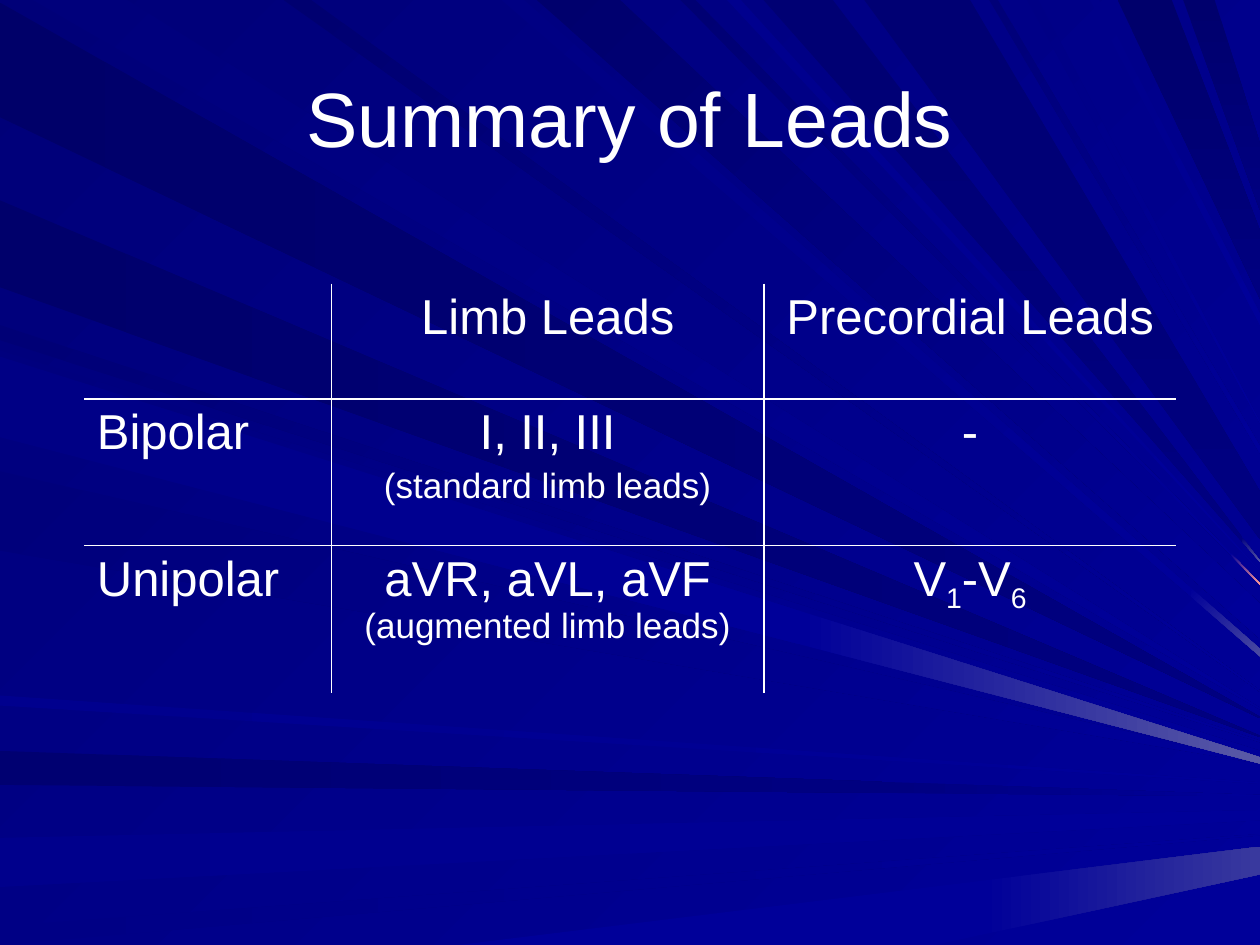
from lxml.etree import SubElement
from pptx import Presentation
from pptx.dml.color import RGBColor as RGB
from pptx.enum.text import MSO_ANCHOR as Anchor, PP_ALIGN as Align
from pptx.oxml.ns import qn
from pptx.util import Cm, Pt

# ---- Content ----
TITLE = "Summary of Leads"
# Each cell is a list of paragraphs, each paragraph a list of (text, style)
ROWS = [
    [[], [[("Limb Leads", "main")]], [[("Precordial Leads", "main")]]],
    [[[("Bipolar", "main")]],
     [[("I, II, III", "main")], [("(standard limb leads)", "note")]],
     [[("-", "main")]]],
    [[[("Unipolar", "main")]],
     [[("aVR, aVL, aVF ", "main"), ("(augmented limb leads)", "note")]],
     [[("V", "main"), ("1", "sub"), ("-V", "main"), ("6", "sub")]]],
]

# ---- Theme ----
THEME = {
    "font": "Arial", "ink": "FFFFFF", "background": ("000078", "000099"),
    "title": 44, "main": 28, "sub": 28, "note": 20,
    "rule": Pt(1), "para_gap": Pt(4),
    "plain_table": "{2D5ABB26-0587-4C30-8999-92F81FD0307C}",
}
# Ray styles: slide edge it starts from, light blue end, gradient angle
STYLES = {
    "left dim": ("left", "80", 0), "left flat": ("left", "99", 0),
    "left slant": ("left", "99", 45), "top dim": ("top", "80", 90),
    "top slant": ("top", "99", 45), "bottom": ("bottom", "99", 0),
}
# Rays, back to front, in inches: style, dark blue, start and end on that edge,
# height on the right edge; then thickness there, glow start and glow colour
RAYS = [
    ("left dim", "69", 0.02, 0.93, 5.69),
    ("top slant", "7B", 0.26, 1.01, 5.62),
    ("left dim", "71", 5.96, 6.23, 6.31, 0.01, 7, "000099"),
    ("left flat", "8C", 6.65, 7.04, 6.43, 0.08),
    ("left flat", "85", 7.35, 7.5, 6.62),
    ("bottom", "99", 3.64, 7.42, 6.72, 0.22, 7.8, "39399E"),
    ("left slant", "76", 2.58, 2.7, 5.88),
    ("left dim", "6B", 1.59, 2.28, 5.84),
    ("top slant", "83", 3.98, 4.16, 5.15, 0.06, 9.45, "4A4AA1"),
    ("top slant", "6D", 4.26, 4.92, 4.79, 0.28),
    ("top slant", "73", 5.4, 5.52, 4.63, 0.01, 9.77, "FF9999"),
    ("top dim", "73", 6.06, 6.61, 4.45, 0.01, 9.86, "5A5AA6"),
    ("top dim", "6B", 8.87, 9.3, 1.83, 0.54),
    ("top dim", "6D", 9.39, 9.64, 1.14, 0.53),
    ("left slant", "7E", 2.78, 3.42, 5.96, 0.06),
    ("left slant", "7B", 3.74, 4.37, 6.05),
    ("left flat", "8E", 5.52, 5.6, 6.21),
    ("top slant", "70", 2.25, 2.47, 5.48),
    ("top slant", "8E", 5.77, 5.88, 4.53),
    ("top dim", "73", 6.86, 7.7, 3.9, 0.38),
    ("top slant", "78", 7.85, 7.92, 3.54, 0.06),
    ("top slant", "85", 8.15, 8.24, 3.35),
    ("top slant", "8A", 8.65, 8.72, 2.49, 0.09),
    ("left flat", "85", 2.83, 3.47, 6.01, 0.05, 6.35, "5A5AA6"),
]
WIDTH, HEIGHT = 10, 7.5


def inch_cm(x):
    return Cm(x * 2.54)


def set_fill(fill, colours, angle):
    dark, light = colours
    if dark == light:
        fill.solid()
        fill.fore_color.rgb = RGB.from_string(dark)
        return
    fill.gradient()
    fill.gradient_angle = -angle % 360
    for stop, colour in zip(fill.gradient_stops, colours):
        stop.color.rgb = RGB.from_string(colour)


def add_polygon(corners, colours, angle):
    start, *rest = [(inch_cm(x), inch_cm(y)) for x, y in corners]
    builder = s.shapes.build_freeform(*start)
    builder.add_line_segments(rest, close=True)
    sp = builder.convert_to_shape()
    sp.shadow.inherit = False
    sp.line.fill.background()
    set_fill(sp.fill, colours, angle)


def point_at(x, start, end):
    share = (x - start[0]) / (end[0] - start[0])
    return x, start[1] + share * (end[1] - start[1])


def add_ray(style, dark, a, b, tip, thickness=0.01, glow_x=None, glow=None):
    edge, light, angle = STYLES[style]
    upper, lower = {
        "left": ((0, a), (0, b)),
        "top": ((b, 0), (a, 0)),
        "bottom": ((a, HEIGHT), (b, HEIGHT)),
    }[edge]
    ends = (WIDTH, tip), (WIDTH, tip + thickness)
    base = "0000" + light
    cut = ends
    if glow:
        cut = point_at(glow_x, upper, ends[0]), point_at(glow_x, lower, ends[1])
    add_polygon([upper, cut[0], cut[1], lower], ("0000" + dark, base), angle)
    if glow:
        add_polygon([cut[0], ends[0], ends[1], cut[1]], (base, glow), angle)


def add_run(p, text, style):
    r = p.add_run()
    r.text = text
    formats = {"name": THEME["font"], "size": Pt(THEME[style])}
    for key, value in formats.items():
        setattr(r.font, key, value)
    r.font.color.rgb = RGB.from_string(THEME["ink"])
    if style == "sub":
        r.font._element.set("baseline", "-25000")


def add_border(cell, side, visible):
    ln = SubElement(cell._tc.get_or_add_tcPr(), qn(f"a:ln{side}"), w=str(int(THEME["rule"])))
    if visible:
        solid = SubElement(ln, qn("a:solidFill"))
        SubElement(solid, qn("a:srgbClr"), val=THEME["ink"])
    else:
        SubElement(ln, qn("a:noFill"))


prs = Presentation()
prs.slide_width, prs.slide_height = inch_cm(WIDTH), inch_cm(HEIGHT)
s = prs.slides.add_slide(prs.slide_layouts[6])

# Background and rays
set_fill(s.background.fill, THEME["background"], 45)
for ray in RAYS:
    add_ray(*ray)

# Title
tf = s.shapes.add_textbox(Cm(1.27), Cm(0.76), Cm(22.86), Cm(3.18)).text_frame
for key, value in {"word_wrap": True, "vertical_anchor": Anchor.MIDDLE}.items():
    setattr(tf, key, value)
tf.paragraphs[0].alignment = Align.CENTER
add_run(tf.paragraphs[0], TITLE, "title")

# Table of leads
col_widths = [Cm(4.98), Cm(8.72), Cm(8.31)]
row_heights = [Cm(2.32), Cm(2.96), Cm(2.96)]
n_rows, n_cols = len(row_heights), len(col_widths)
table = s.shapes.add_table(n_rows, n_cols, Cm(1.7), Cm(5.72),
                           sum(col_widths), sum(row_heights)).table
table.first_row = table.horz_banding = False
table._tbl.tblPr.find(qn("a:tableStyleId")).text = THEME["plain_table"]
for col, width in zip(table.columns, col_widths):
    col.width = width
for row, height in zip(table.rows, row_heights):
    row.height = height

for i, row in enumerate(ROWS):
    for j, paragraphs in enumerate(row):
        cell = table.cell(i, j)
        # Rules run only between cells, never round the outside
        inner = {"L": j > 0, "R": j < n_cols - 1, "T": i > 0, "B": i < n_rows - 1}
        for side, visible in inner.items():
            add_border(cell, side, visible)
        cell.fill.background()
        tf = cell.text_frame
        for k, runs in enumerate(paragraphs):
            p = tf.add_paragraph() if k else tf.paragraphs[0]
            p.alignment = Align.CENTER if j else Align.LEFT
            if k:
                p.space_before = THEME["para_gap"]
            for text, style in runs:
                add_run(p, text, style)

prs.save("out.pptx")
